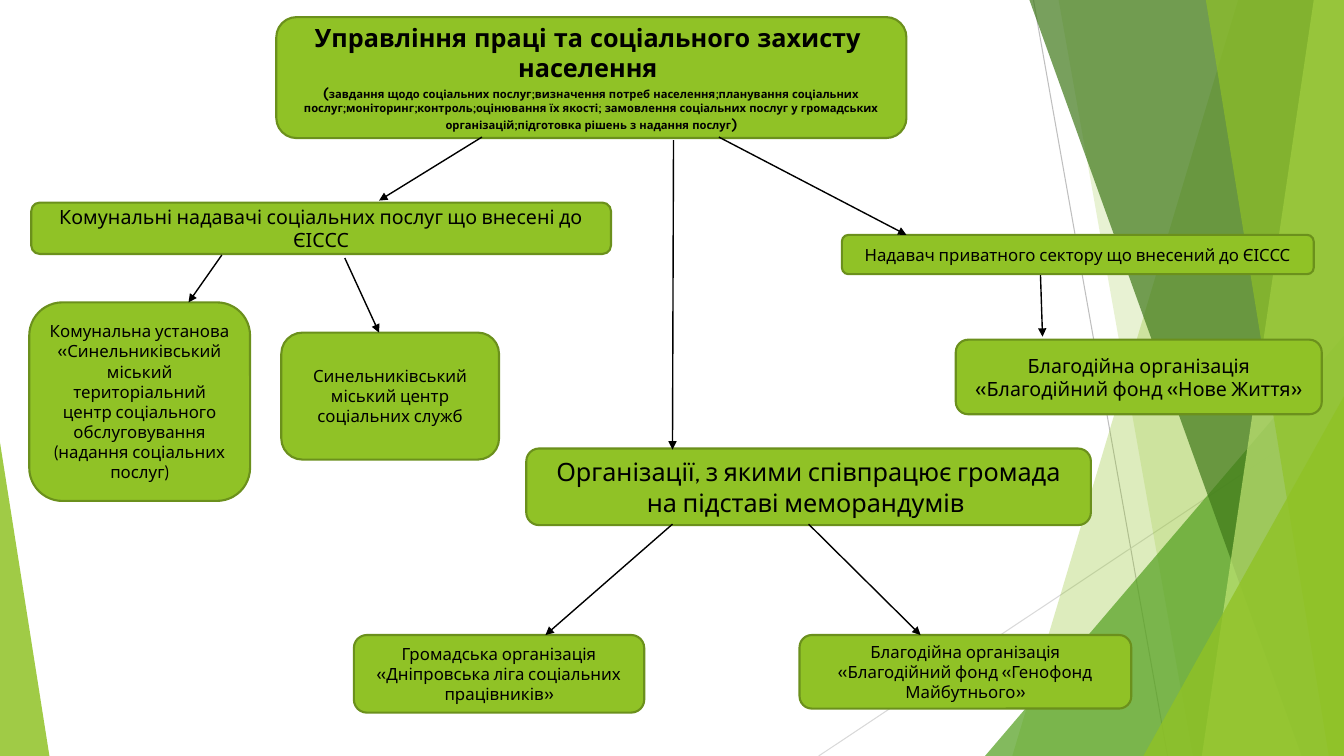
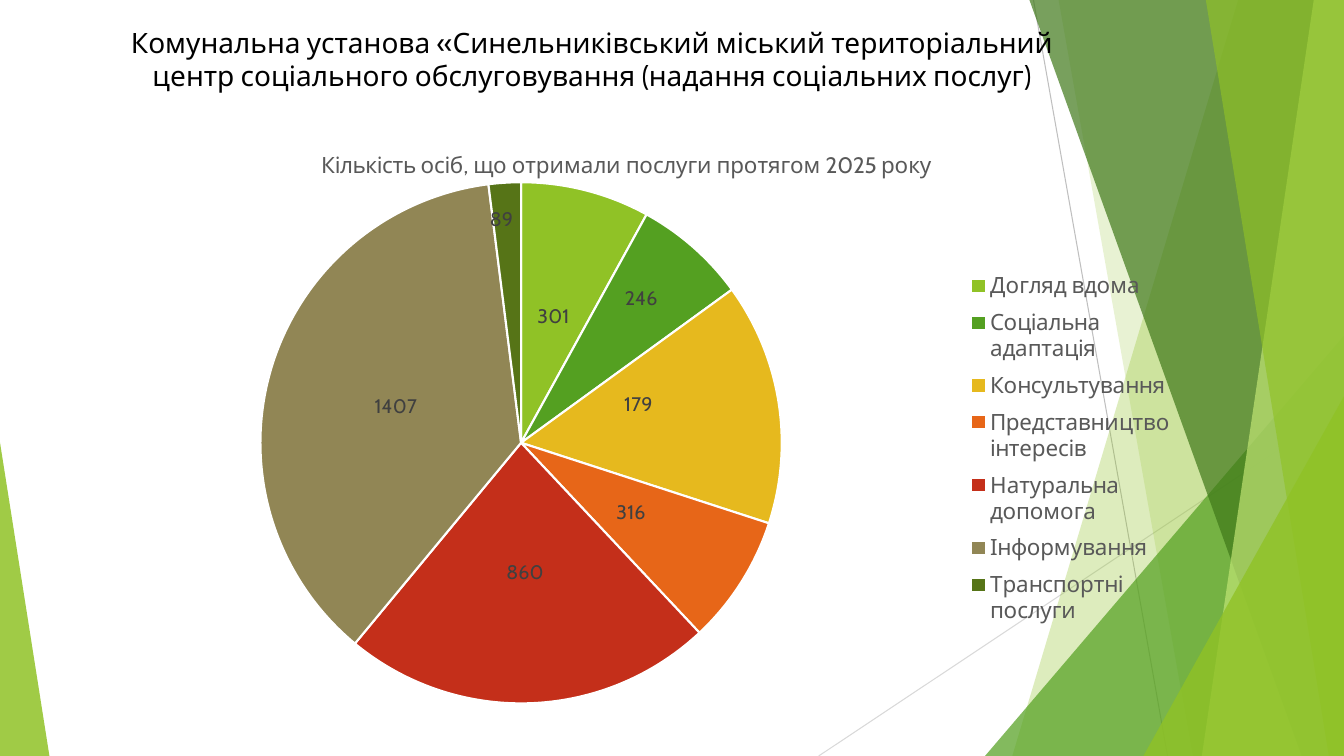
from lxml import etree
from pptx import Presentation
from pptx.chart.data import CategoryChartData
from pptx.dml.color import RGBColor
from pptx.enum.chart import XL_CHART_TYPE, XL_LABEL_POSITION, XL_LEGEND_POSITION
from pptx.enum.shapes import MSO_CONNECTOR, MSO_SHAPE
from pptx.enum.text import MSO_ANCHOR, PP_ALIGN
from pptx.oxml.ns import qn
from pptx.util import Inches, Pt

ROUNDED = MSO_SHAPE.ROUNDED_RECTANGLE
TRIANGLE = MSO_SHAPE.ISOSCELES_TRIANGLE
STRAIGHT = MSO_CONNECTOR.STRAIGHT
CENTER, MIDDLE, TOP = PP_ALIGN.CENTER, MSO_ANCHOR.MIDDLE, MSO_ANCHOR.TOP
PIE = XL_CHART_TYPE.PIE
LABEL_CENTER = XL_LABEL_POSITION.CENTER
LEGEND_RIGHT = XL_LEGEND_POSITION.RIGHT

WIDTH, HEIGHT = 13.33, 7.5
GREEN, FOREST, DARK, LIME = "90C226", "54A021", "3F7819", "C0E474"
EDGE, BLACK, WHITE = "6B901C", "000000", "FFFFFF"
GREY, LABEL_GREY = "595959", "404040"
BODY, HEAD = "Cabin", "Quicksand"


def rgb(value):
    return RGBColor.from_string(value)


def apply(target, **values):
    for name, value in values.items():
        setattr(target, name, value)


def set_font(font, size, color=BLACK, name=BODY, bold=False):
    apply(font, size=Pt(size), name=name, bold=bold)
    font.color.rgb = rgb(color)


def set_layout(parent, index, **values):
    for old in parent.findall(qn("c:layout")):
        parent.remove(old)
    layout = etree.Element(qn("c:layout"))
    manual = etree.SubElement(layout, qn("c:manualLayout"))
    for tag, value in values.items():
        etree.SubElement(manual, qn("c:" + tag)).set("val", str(value))
    parent.insert(index, layout)


class Deck:
    def __init__(self):
        self.prs = Presentation()
        apply(self.prs, slide_width=Inches(WIDTH), slide_height=Inches(HEIGHT))
        self.blank = self.prs.slide_layouts[6]
        for ph in list(self.blank.placeholders):
            self.blank.shapes.element.remove(ph.element)
        self.new_slide()
        self.backdrop()
        for shape in list(self.s.shapes):
            self.blank.shapes.element.append(shape.element)

    def new_slide(self):
        self.s = self.prs.slides.add_slide(self.blank)

    def paint(self, shape, color, opacity=100, edge=None):
        shape.shadow.inherit = False
        shape.fill.solid()
        shape.fill.fore_color.rgb = rgb(color)
        if opacity < 100:
            clr = shape.element.spPr.find(".//" + qn("a:srgbClr"))
            etree.SubElement(clr, qn("a:alpha")).set("val", str(opacity * 1000))
        if edge:
            shape.line.color.rgb = rgb(edge)
            shape.line.width = Pt(1.5)
        else:
            shape.line.fill.background()

    def line(self, start, end, color=BLACK, width=1, arrow=True):
        c = self.s.shapes.add_connector(STRAIGHT, *map(Inches, start + end))
        c.line.color.rgb = rgb(color)
        c.line.width = Pt(width)
        if arrow:
            ln = c.element.spPr.find(qn("a:ln"))
            etree.SubElement(ln, qn("a:tailEnd")).set("type", "triangle")
        etree.SubElement(c.element.spPr, qn("a:effectLst"))

    def band(self, top_left, bottom_left, color, opacity):
        points = [(WIDTH, 0), (WIDTH, HEIGHT), (bottom_left, HEIGHT)]
        outline = self.s.shapes.build_freeform(Inches(top_left), 0)
        outline.add_line_segments([tuple(map(Inches, pt)) for pt in points])
        self.paint(outline.convert_to_shape(), color, opacity)

    def corner(self, left, top, width, apex, color, opacity):
        box = map(Inches, (left, top, width, HEIGHT - top))
        shape = self.s.shapes.add_shape(TRIANGLE, *box)
        shape.adjustments[0] = apex
        self.paint(shape, color, opacity)

    def backdrop(self):
        self.line((10.25, 0), (11.58, HEIGHT), "BFBFBF", 0.75, False)
        self.line((WIDTH, 4.03), (8.12, HEIGHT), "D9D9D9", 0.75, False)
        self.band(12.28, 10.04, GREEN, 30)
        self.band(10.5, 11.83, GREEN, 20)
        self.corner(9.77, 3.33, 3.56, 1, FOREST, 72)
        self.band(10.21, 12.91, DARK, 70)
        self.band(13.03, 11.92, LIME, 70)
        self.band(11.96, 13.18, GREEN, 65)
        self.corner(11.34, 3.93, 1.99, 1, GREEN, 80)
        self.corner(0, 4.39, 0.49, 0, GREEN, 85)

    def fill_text(self, shape, paragraphs, anchor, **style):
        tf = shape.text_frame
        apply(tf, word_wrap=True, vertical_anchor=anchor)
        for i, runs in enumerate(paragraphs):
            p = tf.add_paragraph() if i else tf.paragraphs[0]
            p.alignment = CENTER
            for text, size in runs:
                r = p.add_run()
                r.text = text
                set_font(r.font, size, **style)

    def node(self, box, paragraphs, **style):
        shape = self.s.shapes.add_shape(ROUNDED, *map(Inches, box))
        self.paint(shape, GREEN, edge=EDGE)
        self.fill_text(shape, paragraphs, MIDDLE, **style)

    def title(self, text):
        box = map(Inches, (1.17, 0.2, 9.4, 0.91))
        self.fill_text(self.s.shapes.add_textbox(*box), [[(text, 20)]], TOP)

    def pie(self, box, title, rows):
        data = CategoryChartData()
        data.categories = [row[0] for row in rows]
        data.add_series("Series 1", [row[1] for row in rows])
        chart = self.s.shapes.add_chart(PIE, *map(Inches, box), data).chart
        set_font(chart.font, 10)

        chart.has_title = True
        p = chart.chart_title.text_frame.paragraphs[0]
        r = p.add_run()
        r.text = title
        set_font(r.font, 16, GREY)
        heading = chart.element.find(".//" + qn("c:title"))
        set_layout(heading, 1, xMode="edge", yMode="edge", x=0.23, y=0.04)

        chart.has_legend = True
        apply(chart.legend, position=LEGEND_RIGHT, include_in_layout=False)
        set_font(chart.legend.font, 16, GREY)
        legend = chart.element.find(".//" + qn("c:legend"))
        set_layout(legend, 1, xMode="edge", yMode="edge",
                   x=0.8, y=0.24, w=0.19, h=0.64)

        area = chart.element.find(".//" + qn("c:plotArea"))
        set_layout(area, 0, layoutTarget="inner", xMode="edge", yMode="edge",
                   x=0.18, y=0.1, w=0.46, h=0.9)

        plot = chart.plots[0]
        plot.vary_by_categories = True
        for i, (_, _, label, color, _) in enumerate(rows):
            point = plot.series[0].points[i]
            point.format.fill.solid()
            point.format.fill.fore_color.rgb = rgb(color)
            point.format.line.color.rgb = rgb(WHITE)
            point.format.line.width = Pt(1.5)
            r = point.data_label.text_frame.paragraphs[0].add_run()
            r.text = label
            set_font(r.font, 14, LABEL_GREY)
            point.data_label.position = LABEL_CENTER
        labels = chart.element.findall(".//" + qn("c:dLbl"))
        for label, row in zip(labels, rows):
            if row[4]:
                set_layout(label, 1, x=row[4][0], y=row[4][1])


CENTRE_NAME = ("Комунальна установа «Синельниківський міський територіальний "
               "центр соціального обслуговування (надання соціальних послуг)")
DEPARTMENT = [
    [("Управління праці та соціального захисту ", 18)],
    [("населення ", 18)],
    [("(", 11),
     ("завдання щодо соціальних послуг;визначення потреб населення;"
      "планування соціальних послуг;моніторинг;контроль;оцінювання їх якості; "
      "замовлення соціальних послуг у громадських організацій;"
      "підготовка рішень з надання послуг", 8),
     (")", 11)],
]
NODES = [
    ((0.31, 2.01, 5.75, 0.51), 14,
     "Комунальні надавачі соціальних послуг що внесені до ЄІССС"),
    ((0.29, 3, 2.19, 1.97), 12, CENTRE_NAME),
    ((2.79, 3.3, 2.16, 1.26), 12,
     "Синельниківський міський центр соціальних служб"),
    ((8.35, 2.33, 4.68, 0.39), 12,
     "Надавач приватного сектору що внесений до ЄІССС"),
    ((9.48, 3.37, 3.63, 0.74), 14,
     "Благодійна організація «Благодійний фонд «Нове Життя»"),
    ((5.22, 4.45, 5.6, 0.76), 18,
     "Організації, з якими співпрацює громада на підставі меморандумів "),
    ((3.51, 6.3, 2.88, 0.77), 12,
     "Громадська організація «Дніпровська ліга соціальних працівників»"),
    ((7.93, 6.3, 3.29, 0.73), 12,
     "Благодійна організація «Благодійний фонд «Генофонд Майбутнього»"),
]
ARROWS = [
    ((4.78, 1.36), (3.76, 1.99)),
    ((7.13, 1.36), (8.99, 2.33)),
    ((6.68, 1.39), (6.67, 4.46)),
    ((6.67, 5.2), (5.41, 6.3)),
    ((8.02, 5.2), (9.13, 6.3)),
    ((2.2, 2.53), (1.87, 3)),
    ((3.42, 2.56), (3.76, 3.3)),
    ((10.32, 2.73), (10.34, 3.34)),
]
SERVICES = [
    ("Догляд вдома", 8, "301", GREEN, None),
    ("Соціальна адаптація", 7, "246", FOREST, (0.03, -0.08)),
    ("Консультування", 15, "179", "E6B91E", (-0.01, -0.03)),
    ("Представництво інтересів", 8, "316", "E76618", None),
    ("Натуральна допомога", 23, "860", "C42F1A", None),
    ("Інформування", 37, "1407", "918655", None),
    ("Транспортні послуги", 2, "89", "567417", (-0.01, -0.16)),
]


def main():
    deck = Deck()
    deck.node((2.74, 0.17, 6.25, 1.2), DEPARTMENT, name=HEAD, bold=True)
    for box, size, text in NODES:
        deck.node(box, [[(text, size)]])
    for start, end in ARROWS:
        deck.line(start, end)

    deck.new_slide()
    deck.title(CENTRE_NAME)
    deck.pie((0.56, 1.22, 11.24, 5.77),
             "Кількість осіб, що отримали послуги протягом 2025 року", SERVICES)
    deck.prs.save("out.pptx")


if __name__ == "__main__":
    main()
